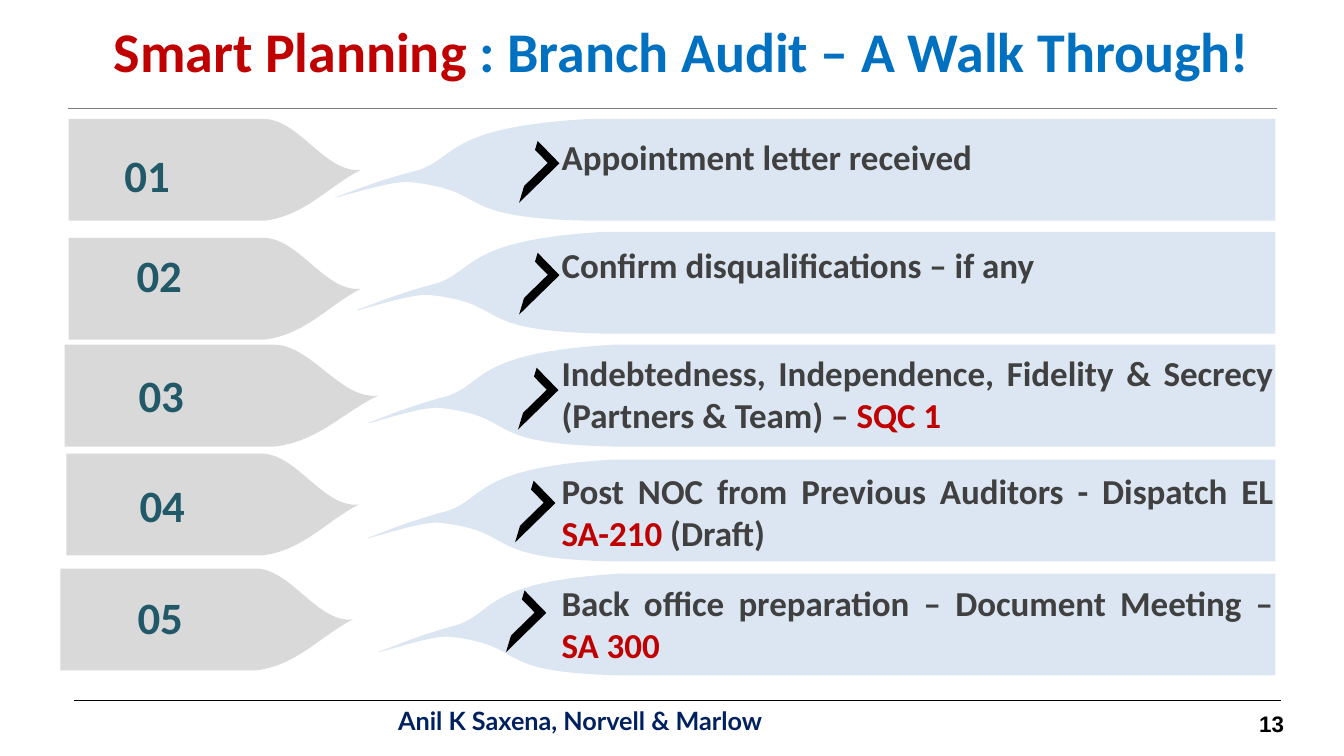
from lxml.etree import SubElement
from pptx import Presentation
from pptx.dml.color import RGBColor
from pptx.enum.shapes import MSO_CONNECTOR, MSO_SHAPE
from pptx.enum.text import MSO_ANCHOR, MSO_AUTO_SIZE, PP_ALIGN
from pptx.oxml.ns import qn
from pptx.util import Pt

EMU_PER_PX = 9144  # 100 px to the inch
RIBBON_HEIGHT = 101

COLORS = {
    "red": "C00000", "blue": "0070C0", "navy": "002060", "teal": "215968",
    "text": "404040", "tab": "D9D9D9", "band": "DCE6F2",
    "black": "000000", "rule": "7F7F7F",
}

# Outlines in a unit box: each step lists its Bezier controls, if any, then its end.
TAB_OUTLINE = [
    [(0, 0)], [(0.67, 0)],
    [(0.79, 0.01), (0.88, 0.54), (1, 0.5)],
    [(0.89, 0.66), (0.81, 0.95), (0.67, 1)],
    [(0, 1)],
]
BAND_OUTLINE = [
    [(1, 0)], [(0.27, 0)],
    [(0.12, 0.08), (0.13, 0.37), (0.09, 0.5)],
    [(0.04, 0.62), (0.02, 0.71), (0, 0.77)],
    [(0, 0.79), (0.06, 0.6), (0.08, 0.62)],
    [(0.17, 0.71), (0.12, 0.97), (0.27, 1)],
    [(1, 1)],
]
BAND_RIGHT = 1265
TEXT_LEFT = 557

# tab (left, top, width), number (left, top), band (left, top),
# chevron (left, top), text (top, width), runs
STEPS = [
    ((68, 118, 290), (71, 139), (332, 118), (496, 155), (134, 708),
     [("Appointment letter received", "text")]),
    ((68, 236, 290), (83, 238), (353, 230), (496, 266), (242, 708),
     [("Confirm disqualifications – if any", "text")]),
    ((64, 342, 311), (85, 357), (364, 342), (495, 380), (349, 706),
     [("Indebtedness, Independence, Fidelity & Secrecy (Partners & Team) – ", "text"),
      ("SQC 1", "red")]),
    ((66, 450, 290), (86, 467), (364, 456), (492, 492), (466, 706),
     [("Post NOC from Previous Auditors - Dispatch EL ", "text"),
      ("SA-210", "red"), (" (Draft)", "text")]),
    ((60, 564, 290), (84, 578), (375, 569), (483, 601), (577, 706),
     [("Back office preparation – Document Meeting – ", "text"),
      ("SA 300", "red")]),
]


def px(length):
    return round(length * EMU_PER_PX)


def color(name):
    return RGBColor.from_string(COLORS[name])


def paint(shape, fill_name):
    shape.shadow.inherit = False
    shape.fill.solid()
    shape.fill.fore_color.rgb = color(fill_name)
    shape.line.fill.background()


def write_runs(frame, runs, size, font_name="Calibri", align=PP_ALIGN.LEFT,
               anchor=MSO_ANCHOR.TOP):
    frame.word_wrap = True
    frame.auto_size = MSO_AUTO_SIZE.NONE
    frame.vertical_anchor = anchor
    paragraph = frame.paragraphs[0]
    paragraph.alignment = align
    for text, color_name in runs:
        run = paragraph.add_run()
        run.text = text
        run.font.name = font_name
        run.font.size = Pt(size)
        run.font.bold = True
        run.font.color.rgb = color(color_name)


def add_text(slide, box, runs, size, inset=True, **style):
    frame = slide.shapes.add_textbox(*map(px, box)).text_frame
    if not inset:
        frame.margin_left = frame.margin_right = 0
        frame.margin_top = frame.margin_bottom = 0
    write_runs(frame, runs, size, **style)


def add_title(slide, box, runs):
    title = slide.shapes.title
    title.left, title.top, title.width, title.height = map(px, box)
    write_runs(title.text_frame, runs, 40, align=PP_ALIGN.CENTER)


def add_rule(slide, left, right, top, color_name):
    line = slide.shapes.add_connector(
        MSO_CONNECTOR.STRAIGHT, px(left), px(top), px(right), px(top))
    line.line.width = Pt(0.75)
    line.line.color.rgb = color(color_name)
    SubElement(line._element.spPr, qn("a:effectLst"))


def add_ribbon(slide, outline, left, top, width, fill_name):
    """Draw the outline's corners, then bend the steps that have Bezier controls."""
    corners = [(px(left + x * width), px(top + y * RIBBON_HEIGHT))
               for x, y in (step[-1] for step in outline)]
    builder = slide.shapes.build_freeform(*corners[0], scale=1.0)
    builder.add_line_segments(corners[1:], close=True)
    ribbon = builder.convert_to_shape()
    segments = list(ribbon._element.iter(qn("a:lnTo")))
    for segment, step in zip(segments, outline[1:]):
        if len(step) == 3:
            curve = segment.makeelement(qn("a:cubicBezTo"))
            for x, y in step:
                SubElement(curve, qn("a:pt"), x=str(px(x * width)),
                           y=str(px(y * RIBBON_HEIGHT)))
            segment.getparent().replace(segment, curve)
    paint(ribbon, fill_name)


def add_chevron(slide, left, top):
    chevron = slide.shapes.add_shape(
        MSO_SHAPE.HALF_FRAME, px(left), px(top), px(56), px(31))
    chevron.adjustments[0] = 0.27
    chevron.adjustments[1] = 0.26
    chevron.rotation = 135.7
    paint(chevron, "black")


def add_step(slide, number, tab, number_corner, band, chevron, text_place, runs):
    band_left, band_top = band
    text_top, text_width = text_place
    add_ribbon(slide, TAB_OUTLINE, *tab, "tab")
    add_ribbon(slide, BAND_OUTLINE, band_left, band_top, BAND_RIGHT - band_left, "band")
    add_text(slide, (*number_corner, 150, 68), [(f"{number:02d}", "teal")], 32,
             inset=False, align=PP_ALIGN.CENTER, anchor=MSO_ANCHOR.MIDDLE)
    add_text(slide, (TEXT_LEFT, text_top, text_width, 88), runs, 25,
             inset=False, align=PP_ALIGN.JUSTIFY)
    add_chevron(slide, *chevron)


def main():
    presentation = Presentation()
    presentation.slide_width = px(1333)
    presentation.slide_height = px(750)
    slide = presentation.slides.add_slide(presentation.slide_layouts[5])

    add_title(slide, (75, 11, 1202, 82),
              [("Smart Planning ", "red"), (": Branch Audit – A Walk Through!", "blue")])
    add_rule(slide, 67, 1267, 108, "rule")
    for number, step in enumerate(STEPS, start=1):
        add_step(slide, number, *step)

    add_rule(slide, 73, 1271, 695, "black")
    add_text(slide, (385, 703, 601, 24), [("Anil K Saxena, Norvell & Marlow", "navy")], 18,
             font_name="Lato", anchor=MSO_ANCHOR.MIDDLE)
    add_text(slide, (1239, 700, 67, 33), [("13", "black")], 16, font_name="Arial")
    presentation.save("out.pptx")


if __name__ == "__main__":
    main()
